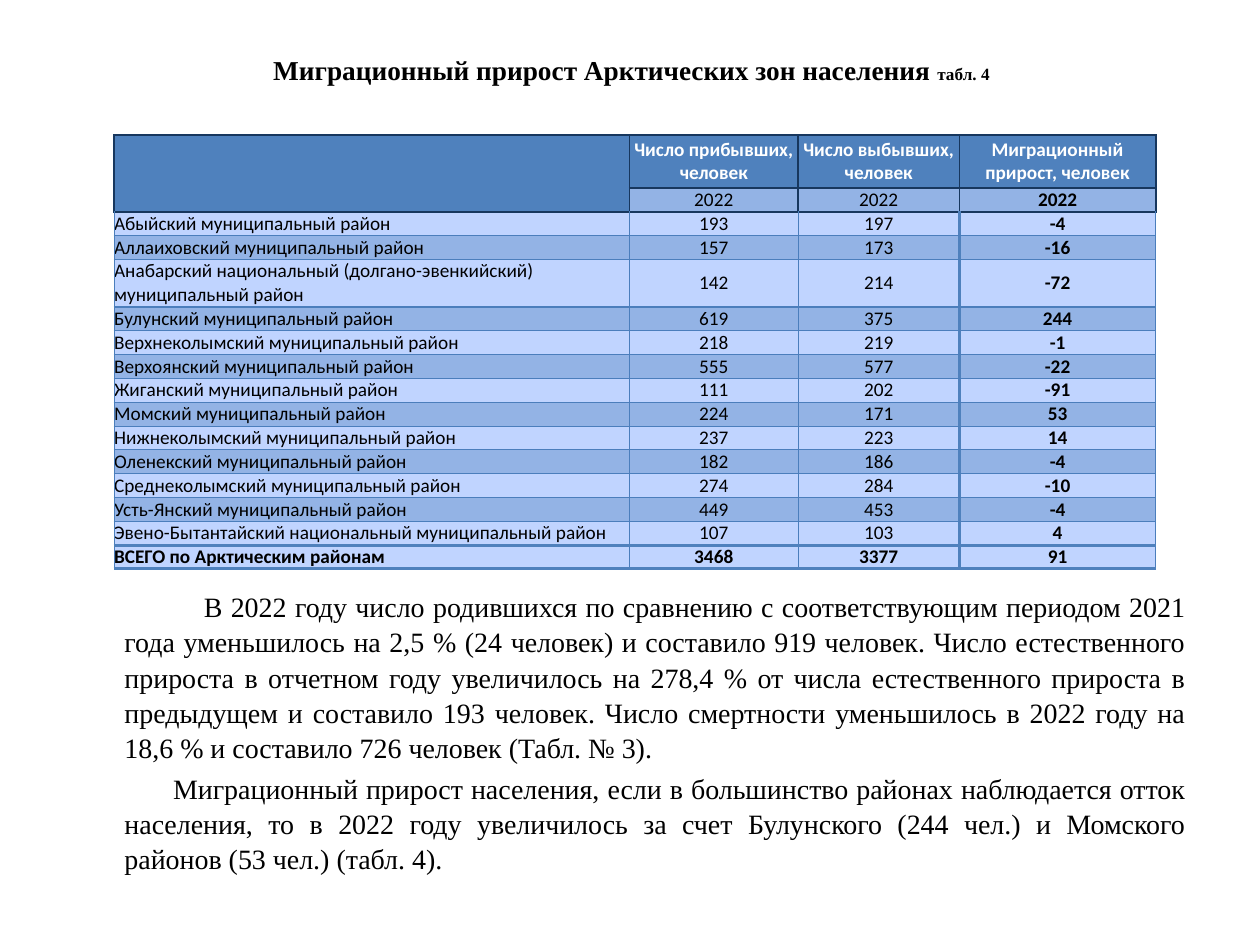
from pptx import Presentation
from pptx.dml.color import RGBColor
from pptx.enum.text import MSO_ANCHOR, PP_ALIGN
from pptx.oxml.ns import qn
from pptx.util import Cm, Pt
from lxml.etree import SubElement

BLACK = RGBColor(0x00, 0x00, 0x00)
WHITE = RGBColor(0xFF, 0xFF, 0xFF)
HEADER_BLUE = RGBColor(0x4F, 0x81, 0xBD)
DARK_BAND = RGBColor(0x93, 0xB3, 0xE5)
LIGHT_BAND = RGBColor(0xC0, 0xD4, 0xFF)
NAVY = RGBColor(0x17, 0x37, 0x5E)
GRID_BLUE = RGBColor(0x4B, 0x7E, 0xBC)

HEADER_LINE = (NAVY, 1)
GRID_LINE = (GRID_BLUE, 0.75)
HEAVY_LINE = (HEADER_BLUE, 2)

SERIF = "Times New Roman"
SANS = "Calibri"

HEADER_ROWS = 2
COLUMN_WIDTHS = (10.39, 3.4, 3.25, 3.96)
HEADER_HEIGHT, ROW_HEIGHT, TALL_HEIGHT = 1.07, 0.48, 0.95
TALL_ROW = 4
ROWS = [
    ("", "Число прибывших, человек", "Число выбывших, человек", "Миграционный прирост, человек"),
    ("", "2022", "2022", "2022"),
    ("Абыйский муниципальный район", "193", "197", "-4"),
    ("Аллаиховский муниципальный район", "157", "173", "-16"),
    ("Анабарский национальный (долгано-эвенкийский) муниципальный район", "142", "214", "-72"),
    ("Булунский муниципальный район", "619", "375", "244"),
    ("Верхнеколымский муниципальный район", "218", "219", "-1"),
    ("Верхоянский муниципальный район", "555", "577", "-22"),
    ("Жиганский муниципальный район", "111", "202", "-91"),
    ("Момский муниципальный район", "224", "171", "53"),
    ("Нижнеколымский муниципальный район", "237", "223", "14"),
    ("Оленекский муниципальный район", "182", "186", "-4"),
    ("Среднеколымский муниципальный район", "274", "284", "-10"),
    ("Усть-Янский муниципальный район", "449", "453", "-4"),
    ("Эвено-Бытантайский национальный муниципальный район", "107", "103", "4"),
    ("ВСЕГО по Арктическим районам", "3468", "3377", "91"),
]
TOTAL_ROW = len(ROWS) - 1
LAST_COLUMN = len(COLUMN_WIDTHS) - 1

# Each paragraph with its first-line indent in centimetres
COMMENTARY = [
    ("В 2022 году число родившихся по сравнению с соответствующим периодом 2021 года "
     "уменьшилось на 2,5 % (24 человек) и составило 919 человек. Число естественного "
     "прироста в отчетном году увеличилось на 278,4 % от числа естественного прироста в "
     "предыдущем и составило 193 человек. Число смертности уменьшилось в 2022 году на "
     "18,6 % и составило 726 человек (Табл. № 3).", 1.6),
    ("Миграционный прирост населения, если в большинство районах наблюдается отток "
     "населения, то в 2022 году увеличилось за счет Булунского (244 чел.) и Момского "
     "районов (53 чел.) (табл. 4).", 0.98),
]


def set_font(font, name, size, bold, color=BLACK):
    font.name, font.size, font.bold = name, Pt(size), bold
    font.color.rgb = color


def place(shape, left, top, width, height):
    shape.left, shape.top = Cm(left), Cm(top)
    shape.width, shape.height = Cm(width), Cm(height)


def fill_title(title, left, top, width, height):
    place(title, left, top, width, height)
    frame = title.text_frame
    frame.word_wrap = True
    frame.vertical_anchor = MSO_ANCHOR.MIDDLE
    frame.margin_bottom = Cm(0.5)
    para = frame.paragraphs[0]
    para.alignment = PP_ALIGN.CENTER
    for text, size in (("Миграционный прирост Арктических зон населения ", 15.6),
                       ("табл. 4", 9.8)):
        span = para.add_run()
        span.text = text
        set_font(span.font, SERIF, size, True)


def horizontal_line(index):
    """Line above row `index`."""
    if index <= HEADER_ROWS:
        return HEADER_LINE
    return HEAVY_LINE if index >= TOTAL_ROW else GRID_LINE


def vertical_line(row, index):
    """Line to the left of column `index` in the given row."""
    if row < HEADER_ROWS:
        return HEADER_LINE
    return HEAVY_LINE if index == LAST_COLUMN else GRID_LINE


def set_borders(cell, row, column):
    sides = {"a:lnL": vertical_line(row, column), "a:lnR": vertical_line(row, column + 1),
             "a:lnT": horizontal_line(row), "a:lnB": horizontal_line(row + 1)}
    properties = cell._tc.get_or_add_tcPr()
    for position, (tag, (color, width)) in enumerate(sides.items()):
        line = SubElement(properties, qn(tag), w=str(Pt(width)))
        fill = SubElement(line, qn("a:solidFill"))
        SubElement(fill, qn("a:srgbClr"), val=str(color))
        properties.insert(position, line)


def format_cell(cell, row, column, text):
    in_header = row == 0 or (row < HEADER_ROWS and column == 0)
    cell.margin_left = cell.margin_right = cell.margin_top = cell.margin_bottom = 0
    is_name = column == 0 and row >= HEADER_ROWS
    cell.vertical_anchor = MSO_ANCHOR.BOTTOM if is_name else MSO_ANCHOR.MIDDLE
    cell.fill.solid()
    band = DARK_BAND if row % 2 and row != TOTAL_ROW else LIGHT_BAND
    cell.fill.fore_color.rgb = HEADER_BLUE if in_header else band
    cell.text = text
    para = cell.text_frame.paragraphs[0]
    para.alignment = PP_ALIGN.LEFT if is_name else PP_ALIGN.CENTER
    bold = in_header or row == TOTAL_ROW or column == LAST_COLUMN
    set_font(para.font, SANS, 11, bold, WHITE if in_header else BLACK)
    set_borders(cell, row, column)


def add_migration_table(page, left, top):
    heights = [ROW_HEIGHT] * len(ROWS)
    heights[0], heights[TALL_ROW] = HEADER_HEIGHT, TALL_HEIGHT
    table = page.shapes.add_table(len(ROWS), len(COLUMN_WIDTHS), Cm(left), Cm(top),
                                  Cm(sum(COLUMN_WIDTHS)), Cm(sum(heights))).table
    table.first_row = table.horz_banding = False
    for column, width in zip(table.columns, COLUMN_WIDTHS):
        column.width = Cm(width)
    for row, height in zip(table.rows, heights):
        row.height = Cm(height)
    for row, texts in enumerate(ROWS):
        for column, text in enumerate(texts):
            format_cell(table.cell(row, column), row, column, text)
    table.cell(0, 0).merge(table.cell(HEADER_ROWS - 1, 0))


def add_commentary(page, left, top, width, height):
    box = page.shapes.add_textbox(Cm(left), Cm(top), Cm(width), Cm(height))
    frame = box.text_frame
    frame.word_wrap = True
    for index, (text, indent) in enumerate(COMMENTARY):
        para = frame.add_paragraph() if index else frame.paragraphs[0]
        para.text = text
        para.alignment = PP_ALIGN.JUSTIFY
        para.space_before = Pt(3.2)
        para.line_spacing = 1.05
        set_font(para.font, SERIF, 16, False)
        properties = para._p.get_or_add_pPr()
        properties.set("marL", str(Cm(0.96)))
        properties.set("indent", str(Cm(indent)))


def main():
    deck = Presentation()
    deck.slide_width, deck.slide_height = Cm(25.4), Cm(19.05)
    page = deck.slides.add_slide(deck.slide_layouts[5])
    fill_title(page.shapes.title, 1.3, 0, 22.86, 3.18)
    add_migration_table(page, 2.3, 2.72)
    add_commentary(page, 1.3, 11.73, 22.86, 6.81)
    deck.save("out.pptx")


if __name__ == "__main__":
    main()
